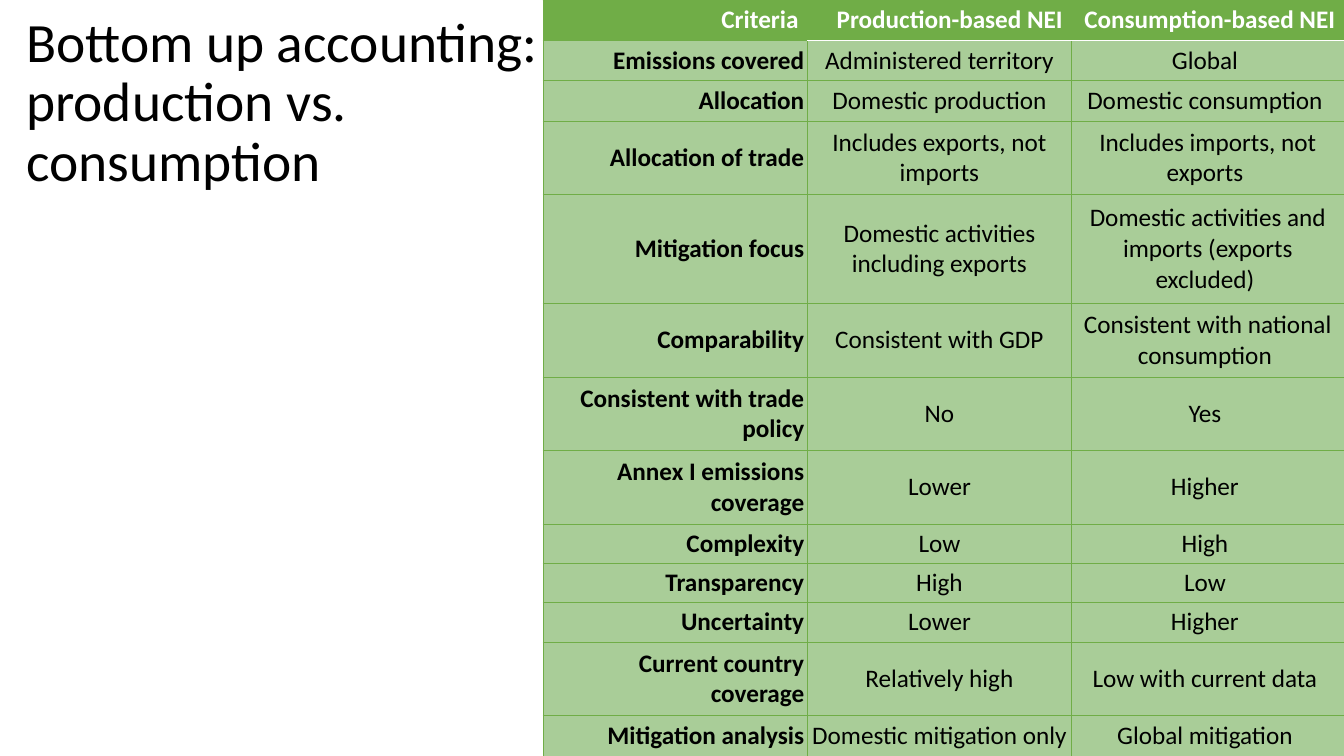
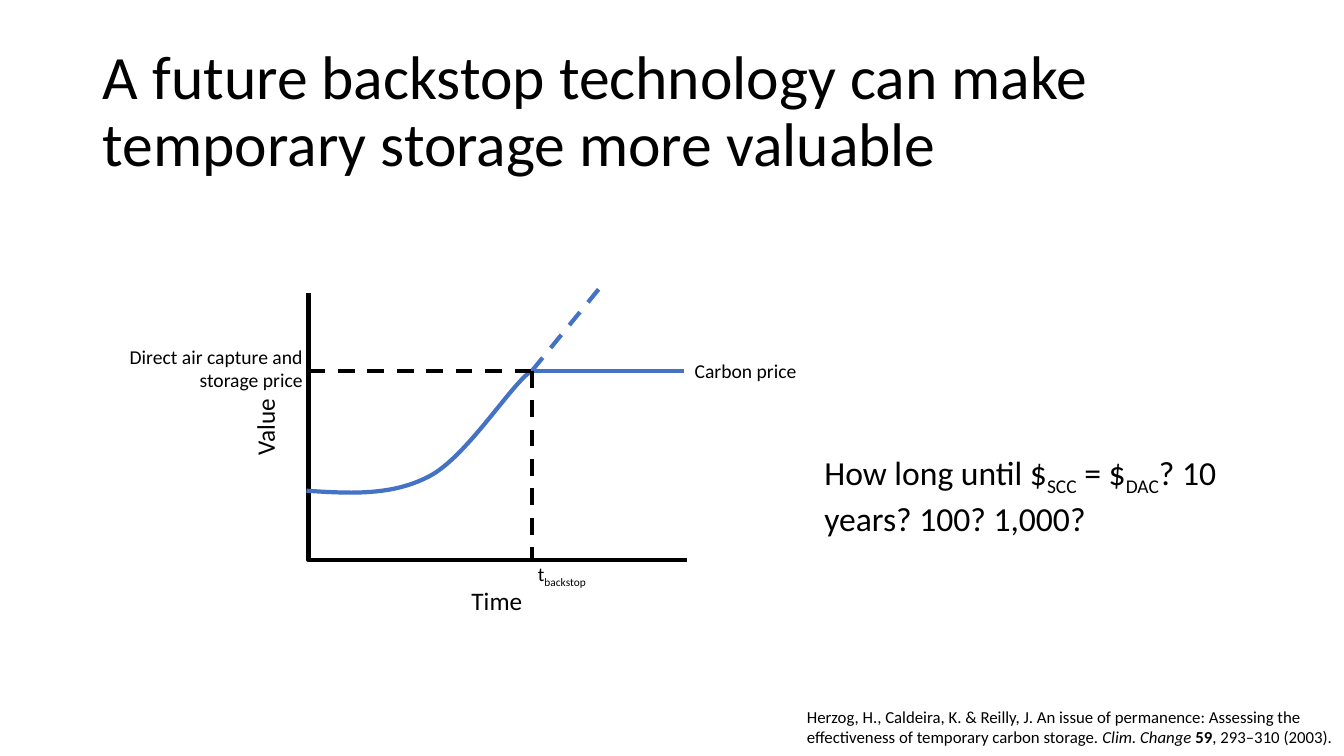
from dataclasses import dataclass
from typing import NamedTuple

from lxml.etree import SubElement
from pptx import Presentation
from pptx.dml.color import RGBColor
from pptx.enum.dml import MSO_LINE
from pptx.enum.shapes import MSO_CONNECTOR
from pptx.enum.text import MSO_ANCHOR, MSO_AUTO_SIZE, PP_ALIGN
from pptx.oxml.ns import qn
from pptx.util import Inches, Pt


@dataclass(frozen=True)
class Theme:
    """Colours, font and type sizes of the deck."""
    font: str = "Calibri"
    black: str = "000000"
    white: str = "FFFFFF"
    green: str = "70AD47"
    light_green: str = "A9CD98"
    blue: str = "4472C4"
    title: float = 44
    narrow_title: float = 39.6
    question: float = 24
    body: float = 18
    label: float = 14
    citation: float = 12
    stroke: float = 3


class Box(NamedTuple):
    """A rectangle whose inner areas are given as percentages of it."""
    left: float
    top: float
    width: float
    height: float

    def point(self, x, y):
        """Return the place at x and y percent."""
        return round(self.left + self.width * x / 100), round(self.top + self.height * y / 100)

    def area(self, x, y, width, height):
        """Return an inner box."""
        return Box(*self.point(x, y), round(self.width * width / 100), round(self.height * height / 100))


THEME = Theme()
SLIDE = Box(0, 0, Inches(13.333), Inches(7.5))
ROW_WEIGHTS = [0.4, 0.4, 0.4, 0.73, 1.08, 0.73, 0.73, 0.73, 0.39, 0.39, 0.39, 0.73, 0.4]
COLUMN_WEIGHTS = [2.62, 2.62, 2.7]
CRITERIA = [
    ("Criteria ", "Production-based NEI ", "Consumption-based NEI "),
    ("Emissions covered", "Administered territory", "Global "),
    ("Allocation", "Domestic production", "Domestic consumption "),
    ("Allocation of trade", "Includes exports, not imports", "Includes imports, not exports "),
    ("Mitigation focus", "Domestic activities including exports",
     "Domestic activities and imports (exports excluded) "),
    ("Comparability", "Consistent with GDP", "Consistent with national consumption "),
    ("Consistent with trade policy", "No", "Yes "),
    ("Annex I emissions coverage", "Lower", "Higher "),
    ("Complexity", "Low", "High "),
    ("Transparency", "High", "Low "),
    ("Uncertainty", "Lower", "Higher "),
    ("Current country coverage", "Relatively high", "Low with current data "),
    ("Mitigation analysis", "Domestic mitigation only", "Global mitigation "),
]


def style_font(font, size, color=THEME.black, bold=False):
    """Set the deck's font with a size, colour and weight."""
    font.name, font.size, font.bold = THEME.font, Pt(size), bold
    font.color.rgb = RGBColor.from_string(color)


def add_titled_page(deck, title, box, size):
    """Add a title-only slide with its title in the given box."""
    page = deck.slides.add_slide(deck.slide_layouts[5])
    holder = page.shapes.title
    holder.left, holder.top, holder.width, holder.height = box
    frame = holder.text_frame
    frame.text = title
    frame.word_wrap = True
    frame.auto_size = MSO_AUTO_SIZE.NONE
    frame.vertical_anchor = MSO_ANCHOR.MIDDLE
    para = frame.paragraphs[0]
    para.alignment, para.line_spacing = PP_ALIGN.LEFT, 0.9
    style_font(para.font, size)
    return page


def add_text(shapes, box, spans, size, align=PP_ALIGN.LEFT, wrap=True, rotation=0):
    """Add a text box of (text, style) spans."""
    holder = shapes.add_textbox(*box)
    holder.rotation = rotation
    holder.text_frame.word_wrap = wrap
    para = holder.text_frame.paragraphs[0]
    para.alignment = align
    style_font(para.font, size)
    for text, style in spans:
        span = para.add_run()
        span.text = text
        if style == "subscript":
            span._r.get_or_add_rPr().set("baseline", "-25000")
        elif style == "italic":
            span.font.italic = True
        elif style == "bold":
            span.font.bold = True


def style_line(line, color, dashed=False):
    """Give a line the deck's stroke."""
    line.color.rgb = RGBColor.from_string(color)
    line.width = Pt(THEME.stroke)
    if dashed:
        line.dash_style = MSO_LINE.DASH


def add_line(shapes, start, end, color, dashed=False):
    """Add a straight line between two points."""
    line = shapes.add_connector(MSO_CONNECTOR.STRAIGHT, *start, *end)
    style_line(line.line, color, dashed)
    SubElement(line._element.spPr, qn("a:effectLst"))


def add_outline(shapes, points, color):
    """Add an open, unfilled outline through the points."""
    builder = shapes.build_freeform(*points[0])
    builder.add_line_segments(points[1:], close=False)
    outline = builder.convert_to_shape()
    outline.fill.background()
    outline.shadow.inherit = False
    style_line(outline.line, color)


def bezier_points(start, first, second, end, steps=20):
    """Return points along a cubic curve, without its start."""
    def blend(a, b, c, d, t):
        """Return one coordinate at share t of the curve."""
        s = 1 - t
        return s ** 3 * a + 3 * s * s * t * b + 3 * s * t * t * c + t ** 3 * d
    return [tuple(blend(*axis, step / steps) for axis in zip(start, first, second, end))
            for step in range(1, steps + 1)]


def set_border(cell, side, color, width):
    """Draw one border of a table cell."""
    border = SubElement(cell._tc.get_or_add_tcPr(), qn(f"a:{side}"), w=str(Pt(width)))
    fill = SubElement(border, qn("a:solidFill"))
    SubElement(fill, qn("a:srgbClr"), val=color)


def style_cell(cell, text, row, column):
    """Fill and format one cell of the criteria table."""
    header = row == 0
    cell.text = text
    cell.margin_left = cell.margin_right = Inches(0.03)
    cell.margin_top = cell.margin_bottom = Inches(0.02)
    cell.vertical_anchor = MSO_ANCHOR.MIDDLE
    para = cell.text_frame.paragraphs[0]
    para.alignment = PP_ALIGN.RIGHT if header or column == 0 else PP_ALIGN.CENTER
    style_font(para.font, THEME.body, THEME.white if header else THEME.black, header or column == 0)
    for side in ("lnL", "lnR", "lnT", "lnB"):
        under_header = column > 0 and (row, side) in ((0, "lnB"), (1, "lnT"))
        set_border(cell, side, *((THEME.white, 1) if under_header else (THEME.green, 0.5)))
    cell.fill.solid()
    cell.fill.fore_color.rgb = RGBColor.from_string(THEME.green if header else THEME.light_green)


def add_criteria_table(page, box):
    """Add the comparison table filling the box."""
    table = page.shapes.add_table(len(ROW_WEIGHTS), len(COLUMN_WEIGHTS), *box).table
    for column, weight in zip(table.columns, COLUMN_WEIGHTS):
        column.width = round(box.width * weight / sum(COLUMN_WEIGHTS))
    for row, weight in zip(table.rows, ROW_WEIGHTS):
        row.height = round(box.height * weight / sum(ROW_WEIGHTS))
    for row, texts in enumerate(CRITERIA):
        for column, text in enumerate(texts):
            style_cell(table.cell(row, column), text, row, column)


def add_price_diagram(page, plot):
    """Draw the carbon price diagram around its plot area."""
    shapes = page.shapes.add_group_shape().shapes
    backstop, price = 59, 29
    crossing = plot.point(backstop, price)
    add_outline(shapes, [plot.point(0, 0), plot.point(0, 100), plot.point(100, 100)], THEME.black)
    start, middle = (-0.5, 74), (32, 68.5)
    curve = [start, *bezier_points(start, (11, 75), (22, 76), middle),
             *bezier_points(middle, (42, 61), (54, 33), (backstop, price))]
    add_outline(shapes, [plot.point(*place) for place in curve], THEME.blue)
    add_line(shapes, crossing, plot.point(99, price), THEME.blue)
    add_line(shapes, crossing, plot.point(78, -4), THEME.blue, dashed=True)
    add_line(shapes, plot.point(0, price), crossing, THEME.black, dashed=True)
    add_line(shapes, crossing, plot.point(backstop, 100), THEME.black, dashed=True)
    add_text(shapes, plot.area(40.4, 107.5, 19, 15), [("Time", "")], THEME.body, wrap=False)
    add_text(shapes, plot.area(-21.8, 42.3, 20.5, 15), [("Value", "")], THEME.body, wrap=False, rotation=270)
    for place, spans in (
        ((90.2, 22.6, 41.2, 13), [("Carbon price", "")]),
        ((-50.8, 17.4, 51.9, 21.5), [("Direct air capture and storage price", "")]),
        ((23.9, 98.9, 51.9, 13), [("t", ""), ("backstop", "subscript")]),
    ):
        add_text(shapes, plot.area(*place), spans, THEME.label, PP_ALIGN.RIGHT)


def build_accounting_page(deck):
    """Build the slide comparing two ways of accounting."""
    page = add_titled_page(deck, "Bottom up accounting: production vs. consumption",
                           SLIDE.area(1.2, 4.1, 41.3, 19.3), THEME.narrow_title)
    add_criteria_table(page, SLIDE.area(40.4, 0, 59.6, 100))


def build_backstop_page(deck):
    """Build the slide on the backstop technology."""
    page = add_titled_page(deck, "A future backstop technology can make temporary storage more valuable",
                           SLIDE.area(6.9, 5.3, 86.2, 19.3), THEME.title)
    add_price_diagram(page, SLIDE.area(22.95, 38.8, 28.2, 35.3))
    add_text(page.shapes, SLIDE.area(60.6, 59.1, 33.2, 12.1), [
        ("How long until $", ""), ("SCC", "subscript"), (" = $", ""), ("DAC", "subscript"),
        ("? 10 years? 100? 1,000?", "")], THEME.question)
    add_text(page.shapes, SLIDE.area(59.3, 92.8, 40.7, 6.7), [
        ("Herzog, H., Caldeira, K. & Reilly, J. An issue of permanence: Assessing the "
         "effectiveness of temporary carbon storage. ", ""),
        ("Clim. Change ", "italic"), ("59", "bold"), (", 293–310 (2003).", "")], THEME.citation)


def main():
    """Build and save the deck."""
    deck = Presentation()
    deck.slide_width, deck.slide_height = SLIDE.width, SLIDE.height
    build_accounting_page(deck)
    build_backstop_page(deck)
    deck.save("out.pptx")


if __name__ == "__main__":
    main()
